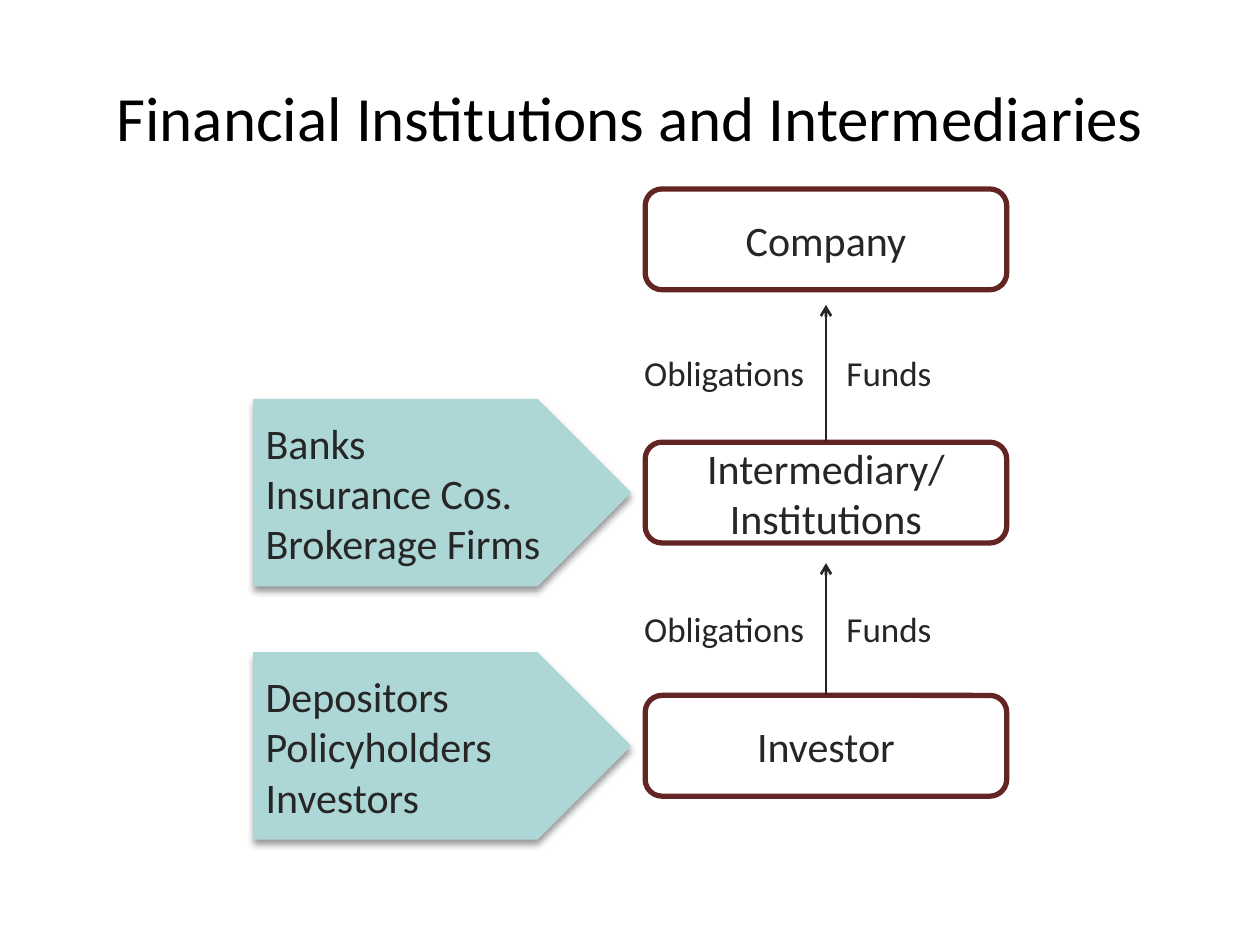
from dataclasses import dataclass

from lxml import etree
from pptx import Presentation
from pptx.dml.color import RGBColor
from pptx.enum.shapes import MSO_CONNECTOR, MSO_SHAPE
from pptx.enum.text import MSO_ANCHOR, MSO_AUTO_SIZE, PP_ALIGN
from pptx.oxml import parse_xml
from pptx.oxml.ns import nsdecls, qn
from pptx.slide import Slide
from pptx.util import Pt

ROUNDED, PENTAGON = MSO_SHAPE.ROUNDED_RECTANGLE, MSO_SHAPE.PENTAGON
STRAIGHT = MSO_CONNECTOR.STRAIGHT
LEFT, CENTER = PP_ALIGN.LEFT, PP_ALIGN.CENTER
TOP, MIDDLE = MSO_ANCHOR.TOP, MSO_ANCHOR.MIDDLE
FIT_SHAPE = MSO_AUTO_SIZE.SHAPE_TO_FIT_TEXT


def rgb(color):
    return RGBColor.from_string(color)


def write(tf, text, *, size, color, font, align=LEFT, anchor=TOP):
    """Write one paragraph per line of text."""
    tf.word_wrap = True
    tf.vertical_anchor = anchor
    for i, line in enumerate(text.split("\n")):
        p = tf.add_paragraph() if i else tf.paragraphs[0]
        p.alignment = align
        r = p.add_run()
        r.text = line
        r.font.name = font
        r.font.size = Pt(size)
        r.font.color.rgb = rgb(color)


@dataclass
class Diagram:
    s: Slide
    font: str = "Calibri"
    ink: str = "262626"
    border: str = "632523"
    accent: str = "ADD7D6"

    def text(self, text, x, y, w, h, *, size=20, color=None, fit=True, **fmt):
        tf = self.s.shapes.add_textbox(Pt(x), Pt(y), Pt(w), Pt(h)).text_frame
        write(tf, text, size=size, color=color or self.ink, font=self.font, **fmt)
        if fit:
            tf.auto_size = FIT_SHAPE

    def shape(self, kind, text, x, y, w, h, align):
        sp = self.s.shapes.add_shape(kind, Pt(x), Pt(y), Pt(w), Pt(h))
        sp.shadow.inherit = False
        write(sp.text_frame, text, size=24, color=self.ink, font=self.font,
              align=align, anchor=MIDDLE)
        return sp

    def box(self, text, x, y, w, h):
        sp = self.shape(ROUNDED, text, x, y, w, h, CENTER)
        sp.fill.background()
        sp.line.color.rgb = rgb(self.border)
        sp.line.width = Pt(3)

    def callout(self, text, x, y, w, h):
        sp = self.shape(PENTAGON, text, x, y, w, h, LEFT)
        sp.fill.solid()
        sp.fill.fore_color.rgb = rgb(self.accent)
        sp.line.fill.background()
        # Soft shadow straight below
        effects = sp._element.spPr.find(qn("a:effectLst"))
        effects.append(parse_xml(
            f'<a:outerShdw {nsdecls("a")} blurRad="{Pt(4)}" dist="{Pt(3)}" '
            'dir="5400000" rotWithShape="0"><a:srgbClr val="000000">'
            '<a:alpha val="40000"/></a:srgbClr></a:outerShdw>'))

    def arrow(self, x, y1, y2):
        c = self.s.shapes.add_connector(STRAIGHT, Pt(x), Pt(y1), Pt(x), Pt(y2))
        c.line.color.rgb = rgb(self.ink)
        c.line.width = Pt(1.5)
        etree.SubElement(c.line._get_or_add_ln(), qn("a:tailEnd"), type="arrow")
        etree.SubElement(c._element.spPr, qn("a:effectLst"))


prs = Presentation()
prs.slide_width, prs.slide_height = Pt(720), Pt(540)
d = Diagram(prs.slides.add_slide(prs.slide_layouts[6]))

# Title
d.text("Financial Institutions and Intermediaries", 36, 21.6, 648, 90,
       size=36, color="000000", fit=False, align=CENTER, anchor=MIDDLE)

# Levels of the chain, top to bottom, each with its examples
BOX_X, BOX_W, BOX_H = 368.7, 206.6, 57.6
CALLOUT_X, CALLOUT_W, CALLOUT_H = 144.7, 216, 107.2
FIRST_Y, PITCH = 108, 144.7
LEVELS = [
    ("Company", None),
    ("Intermediary/\nInstitutions", "Banks\nInsurance Cos.\nBrokerage Firms"),
    ("Investor", "Depositors\nPolicyholders\nInvestors"),
]
tops = [FIRST_Y + i * PITCH for i in range(len(LEVELS))]
for (name, examples), y in zip(LEVELS, tops):
    if examples:
        d.callout(examples, CALLOUT_X, y + (BOX_H - CALLOUT_H) / 2,
                  CALLOUT_W, CALLOUT_H)
    d.box(name, BOX_X, y, BOX_W, BOX_H)

# Flows from each level up to the one above
for start, tip, label_y in zip(tops[1:], (174.2, 321.8), (197.3, 343.8)):
    d.arrow(BOX_X + BOX_W / 2, start, tip)
    d.text("Obligations", 361, label_y, 108, 31.5)
    d.text("Funds", 476.6, label_y, 66.2, 31.5)

prs.save("out.pptx")
